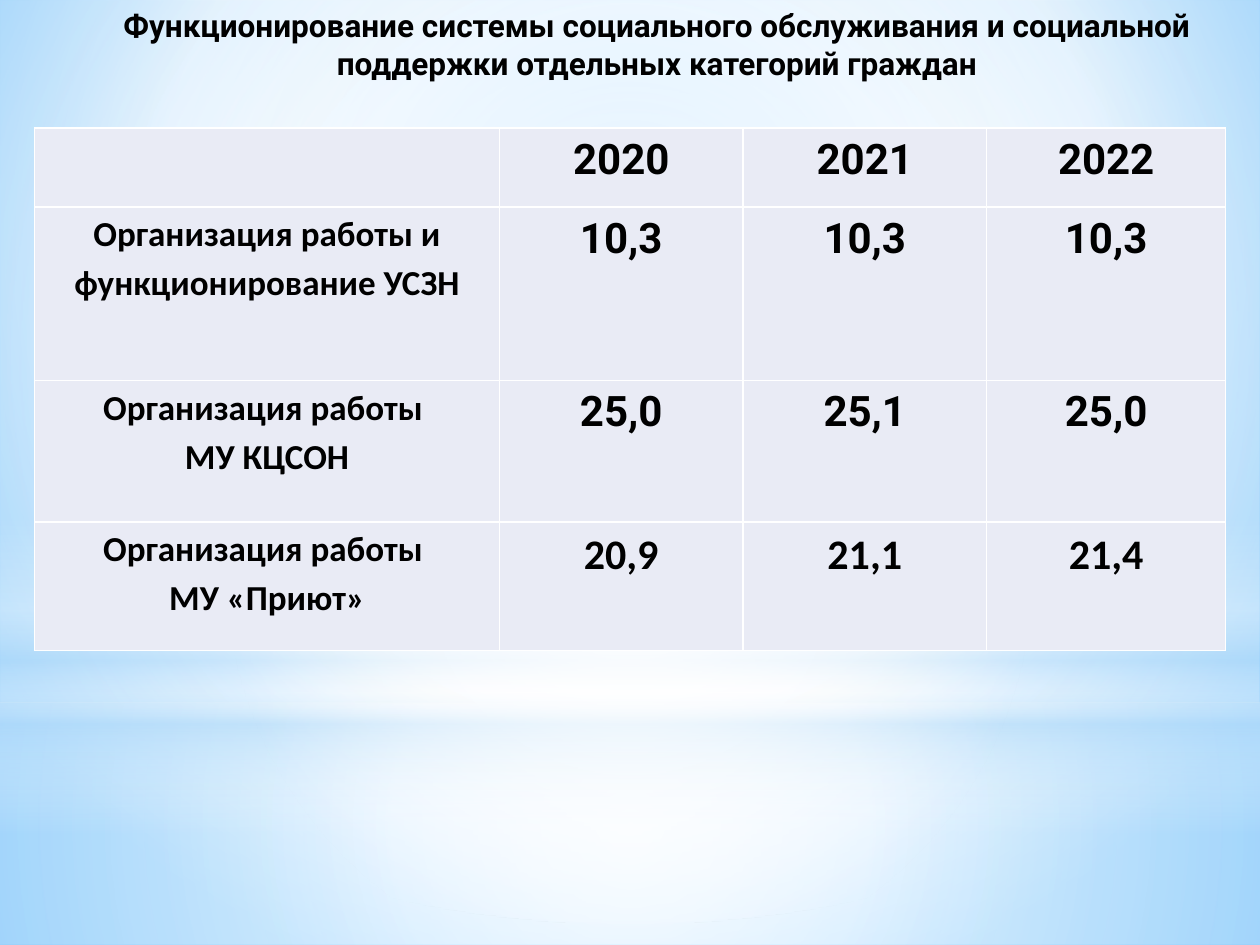
from dataclasses import dataclass
from typing import NamedTuple, Optional

import pptx
import pptx.dml.color
import pptx.enum.shapes
import pptx.enum.text
import pptx.oxml
import pptx.oxml.ns
import pptx.util
from pptx.util import Cm

SHAPES = pptx.enum.shapes.MSO_SHAPE
CENTER = pptx.enum.text.PP_ALIGN.CENTER


@dataclass(frozen=True)
class Theme:
    white: str = "FFFFFF"
    haze: str = "B4DCFA"
    sky_light: str = "9ED5FF"
    sky_deep: str = "5BB9FF"
    cell: str = "E9EBF5"
    text: str = "000000"
    heading_font: str = "Roboto"
    label_font: str = "Calibri"
    title_size: int = 18
    label_size: int = 20
    value_size: int = 24
    border_width: int = 1


THEME = Theme()


class Stop(NamedTuple):
    position: int
    color: str
    opacity: int = 100


class Gradient(NamedTuple):
    stops: list[Stop]
    focus: Optional[tuple[int, int, int, int]] = None  # None: top to bottom


class Glow(NamedTuple):
    kind: pptx.enum.shapes.MSO_SHAPE
    top: float
    height: float
    gradient: Gradient


class TableRow(NamedTuple):
    height: float
    label: list[str]
    values: list[str]
    value_font: str = THEME.heading_font


WHITE, HAZE = THEME.white, THEME.haze
CENTER_FOCUS = (50, 50, 50, 50)
SLIDE_WIDTH, SLIDE_HEIGHT = 25.4, 19.05

BACKGROUND = Gradient(
    [Stop(0, THEME.sky_light), Stop(60, WHITE), Stop(100, THEME.sky_deep)],
    (20, 10, 20, 60))

GLOWS = [
    Glow(SHAPES.RECTANGLE, 14.17, 4.88, Gradient(
        [Stop(0, WHITE, 91), Stop(37, WHITE, 76), Stop(100, HAZE, 79)], CENTER_FOCUS)),
    Glow(SHAPES.RECTANGLE, 0, 14.17, Gradient(
        [Stop(0, WHITE, 89), Stop(48, WHITE, 62), Stop(100, HAZE, 79)], CENTER_FOCUS)),
    Glow(SHAPES.RECTANGLE, 10.46, 6.35, Gradient(
        [Stop(0, WHITE, 0), Stop(29, WHITE, 30), Stop(45, HAZE, 40),
         Stop(55, WHITE, 26), Stop(65, HAZE, 60), Stop(100, WHITE, 0)])),
    Glow(SHAPES.OVAL, 4.45, 14.17, Gradient(
        [Stop(0, WHITE), Stop(56, WHITE, 0)], CENTER_FOCUS)),
]

TITLE = ("Функционирование системы социального обслуживания и социальной "
         "поддержки отдельных категорий граждан")
COLUMN_WIDTHS = [9.37, 4.91, 4.91, 4.82]
ROWS = [
    TableRow(1.59, [], ["2020", "2021", "2022"]),
    TableRow(3.5, ["Организация работы и функционирование УСЗН"], ["10,3"] * 3),
    TableRow(2.85, ["Организация работы ", "МУ КЦСОН"], ["25,0", "25,1", "25,0"]),
    TableRow(2.59, ["Организация работы ", "МУ «Приют»"], ["20,9", "21,1", "21,4"],
             THEME.label_font),
]


def apply_gradient(fill, owner, gradient: Gradient) -> None:
    """Give the fill its stops, with opacity and a radial or vertical course."""
    fill.gradient()
    stops = "".join(
        f'<a:gs pos="{stop.position * 1000}"><a:srgbClr val="{stop.color}">'
        f'<a:alpha val="{stop.opacity * 1000}"/></a:srgbClr></a:gs>'
        for stop in gradient.stops)
    if gradient.focus:
        sides = " ".join(f'{side}="{value * 1000}"'
                         for side, value in zip("ltrb", gradient.focus))
        course = f'<a:path path="circle"><a:fillToRect {sides}/></a:path>'
    else:
        course = '<a:lin ang="5400000" scaled="0"/>'
    element = pptx.oxml.parse_xml(
        f'<a:gradFill {pptx.oxml.ns.nsdecls("a")} rotWithShape="1">'
        f'<a:gsLst>{stops}</a:gsLst>{course}</a:gradFill>')
    current = owner.find(".//" + pptx.oxml.ns.qn("a:gradFill"))
    current.getparent().replace(current, element)


def add_glow(slide, glow: Glow) -> None:
    shape = slide.shapes.add_shape(
        glow.kind, Cm(0), Cm(glow.top), Cm(SLIDE_WIDTH), Cm(glow.height))
    shape.shadow.inherit = False
    shape.line.fill.background()
    apply_gradient(shape.fill, shape.element, glow.gradient)


def write_text(text_frame, lines: list[str], font: str, size: int,
               spacing: Optional[float] = None) -> None:
    for index, line in enumerate(lines):
        paragraph = text_frame.add_paragraph() if index else text_frame.paragraphs[0]
        paragraph.alignment = CENTER
        paragraph.line_spacing = spacing
        run = paragraph.add_run()
        run.text = line
        run.font.name = font
        run.font.size = pptx.util.Pt(size)
        run.font.bold = True
        run.font.color.rgb = pptx.dml.color.RGBColor.from_string(THEME.text)


def style_cell(cell) -> None:
    cell.margin_left = cell.margin_right = Cm(0.08)
    cell.margin_top = cell.margin_bottom = Cm(0)
    properties = cell._tc.get_or_add_tcPr()
    for side in "LRTB":
        properties.append(pptx.oxml.parse_xml(
            f'<a:ln{side} {pptx.oxml.ns.nsdecls("a")} '
            f'w="{pptx.util.Pt(THEME.border_width)}"><a:solidFill>'
            f'<a:srgbClr val="{WHITE}"/></a:solidFill></a:ln{side}>'))
    cell.fill.solid()
    cell.fill.fore_color.rgb = pptx.dml.color.RGBColor.from_string(THEME.cell)


def add_spending_table(slide) -> None:
    table = slide.shapes.add_table(
        len(ROWS), len(COLUMN_WIDTHS), Cm(0.7), Cm(2.58),
        Cm(sum(COLUMN_WIDTHS)), Cm(sum(row.height for row in ROWS))).table
    for column, width in zip(table.columns, COLUMN_WIDTHS):
        column.width = Cm(width)
    for row_index, row in enumerate(ROWS):
        table.rows[row_index].height = Cm(row.height)
        for column_index, lines in enumerate([row.label] + [[value] for value in row.values]):
            cell = table.cell(row_index, column_index)
            style_cell(cell)
            if column_index == 0:
                font, size = THEME.label_font, THEME.label_size
            else:
                font, size = row.value_font, THEME.value_size
            write_text(cell.text_frame, lines, font, size, 1.15)


def add_title(slide) -> None:
    box = slide.shapes.add_textbox(Cm(1.09), Cm(0), Cm(24.31), Cm(1.8))
    box.text_frame.word_wrap = True
    box.text_frame.auto_size = pptx.enum.text.MSO_AUTO_SIZE.SHAPE_TO_FIT_TEXT
    write_text(box.text_frame, [TITLE], THEME.heading_font, THEME.title_size)


def main() -> None:
    presentation = pptx.Presentation()
    presentation.slide_width = Cm(SLIDE_WIDTH)
    presentation.slide_height = Cm(SLIDE_HEIGHT)
    slide = presentation.slides.add_slide(presentation.slide_layouts[6])

    # Sky background with soft glows
    apply_gradient(slide.background.fill, slide.element, BACKGROUND)
    for glow in GLOWS:
        add_glow(slide, glow)

    # Content
    add_spending_table(slide)
    add_title(slide)
    presentation.save("out.pptx")


if __name__ == "__main__":
    main()
